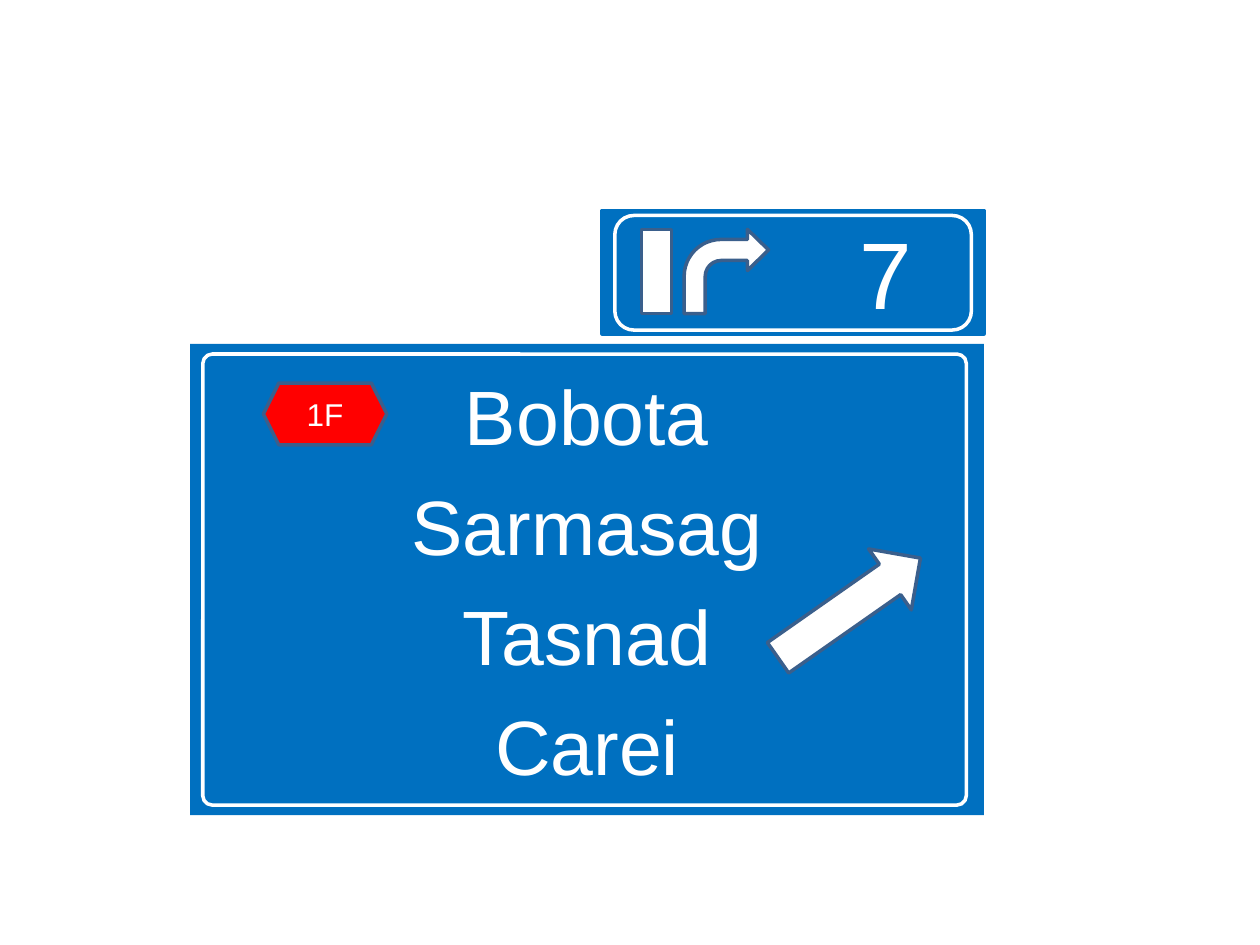
"""Build a slide with a motorway exit sign and its list of destinations."""
from pptx import Presentation
from pptx.dml.color import RGBColor
from pptx.enum.shapes import MSO_SHAPE as Shape
from pptx.enum.text import MSO_ANCHOR as Anchor, PP_ALIGN as Align
from pptx.util import Inches, Pt

WHITE = RGBColor(0xFF, 0xFF, 0xFF)
BLUE = RGBColor(0x00, 0x70, 0xC0)
RED = RGBColor(0xFF, 0x00, 0x00)
OUTLINE = RGBColor(0x3A, 0x5F, 0x8C)

DESTINATIONS = ["Bobota", "Sarmasag", "Tasnad", "Carei"]
ROAD = "1F"
EXIT_NUMBER = "7"


def add_part(slide, kind, box, fill=None, line=None, adjustments=()):
    part = slide.shapes.add_shape(kind, *map(Inches, box))
    part.shadow.inherit = False
    for index, value in enumerate(adjustments):
        part.adjustments[index] = value
    if fill is None:
        part.fill.background()
    else:
        part.fill.solid()
        part.fill.fore_color.rgb = fill
    if line is None:
        part.line.fill.background()
    else:
        part.line.color.rgb = line
        part.line.width = Pt(2)
    return part


def write(part, lines, size, insets=(0.1, 0.05, 0.1, 0.05), gap=0):
    frame = part.text_frame
    frame.word_wrap = True
    frame.vertical_anchor = Anchor.MIDDLE
    (frame.margin_left, frame.margin_top,
     frame.margin_right, frame.margin_bottom) = map(Inches, insets)
    for index, text in enumerate(lines):
        paragraph = frame.add_paragraph() if index else frame.paragraphs[0]
        paragraph.text = text
        paragraph.alignment = Align.CENTER
        paragraph.space_before = Pt(gap if index else 0)
        paragraph.font.size = Pt(size)
        paragraph.font.name = "Arial"
        paragraph.font.color.rgb = WHITE


def main():
    deck = Presentation()
    deck.slide_width, deck.slide_height = Inches(10), Inches(7.5)
    slide = deck.slides.add_slide(deck.slide_layouts[6])

    destination_sign = add_part(slide, Shape.RECTANGLE, (1.51, 2.73, 6.3, 3.74), BLUE)
    write(destination_sign, DESTINATIONS, 44, (0.1, 0.22, 0.1, 0.22), gap=10)
    exit_arrow = add_part(slide, Shape.RIGHT_ARROW, (6.05, 4.53, 1.38, 0.59), WHITE, OUTLINE)
    exit_arrow.rotation = 325
    road_badge = add_part(slide, Shape.HEXAGON, (2.09, 3.04, 0.98, 0.49), RED, OUTLINE)
    write(road_badge, [ROAD], 18)
    add_part(slide, Shape.ROUNDED_RECTANGLE, (1.61, 2.81, 6.06, 3.58),
             line=WHITE, adjustments=[0.021])

    exit_sign = add_part(slide, Shape.ROUNDED_RECTANGLE, (4.78, 1.67, 3.03, 0.98),
                         BLUE, BLUE, [0])
    write(exit_sign, [EXIT_NUMBER], 54, (1.57, 0.05, 0.1, 0.05))
    add_part(slide, Shape.RECTANGLE, (5.09, 1.82, 0.24, 0.67), WHITE, OUTLINE)
    add_part(slide, Shape.BENT_ARROW, (5.43, 1.82, 0.67, 0.67), WHITE, OUTLINE,
             [0.25, 0.245, 0.25, 0.438])
    add_part(slide, Shape.ROUNDED_RECTANGLE, (4.88, 1.71, 2.83, 0.91), line=WHITE)

    deck.save("out.pptx")


if __name__ == "__main__":
    main()
